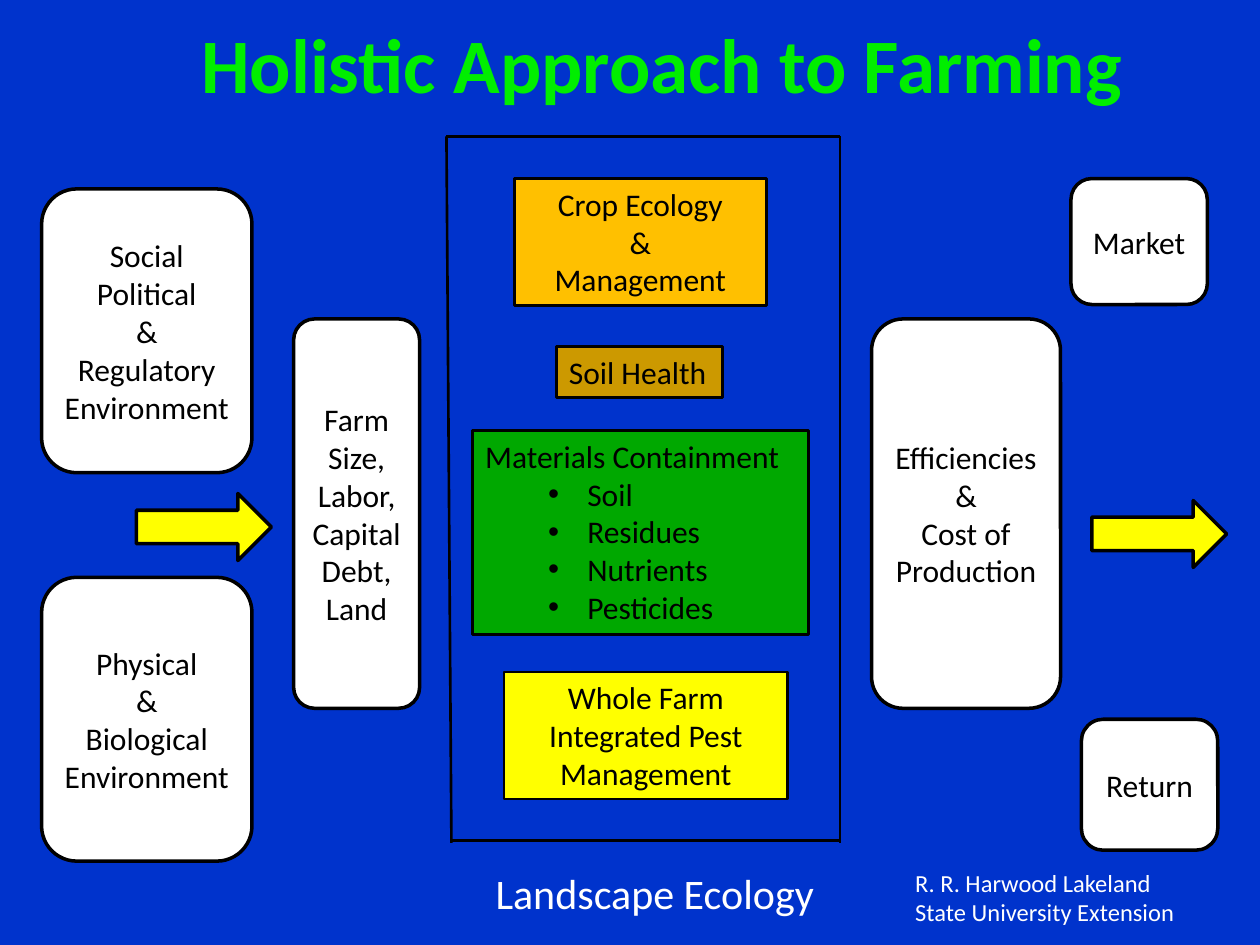
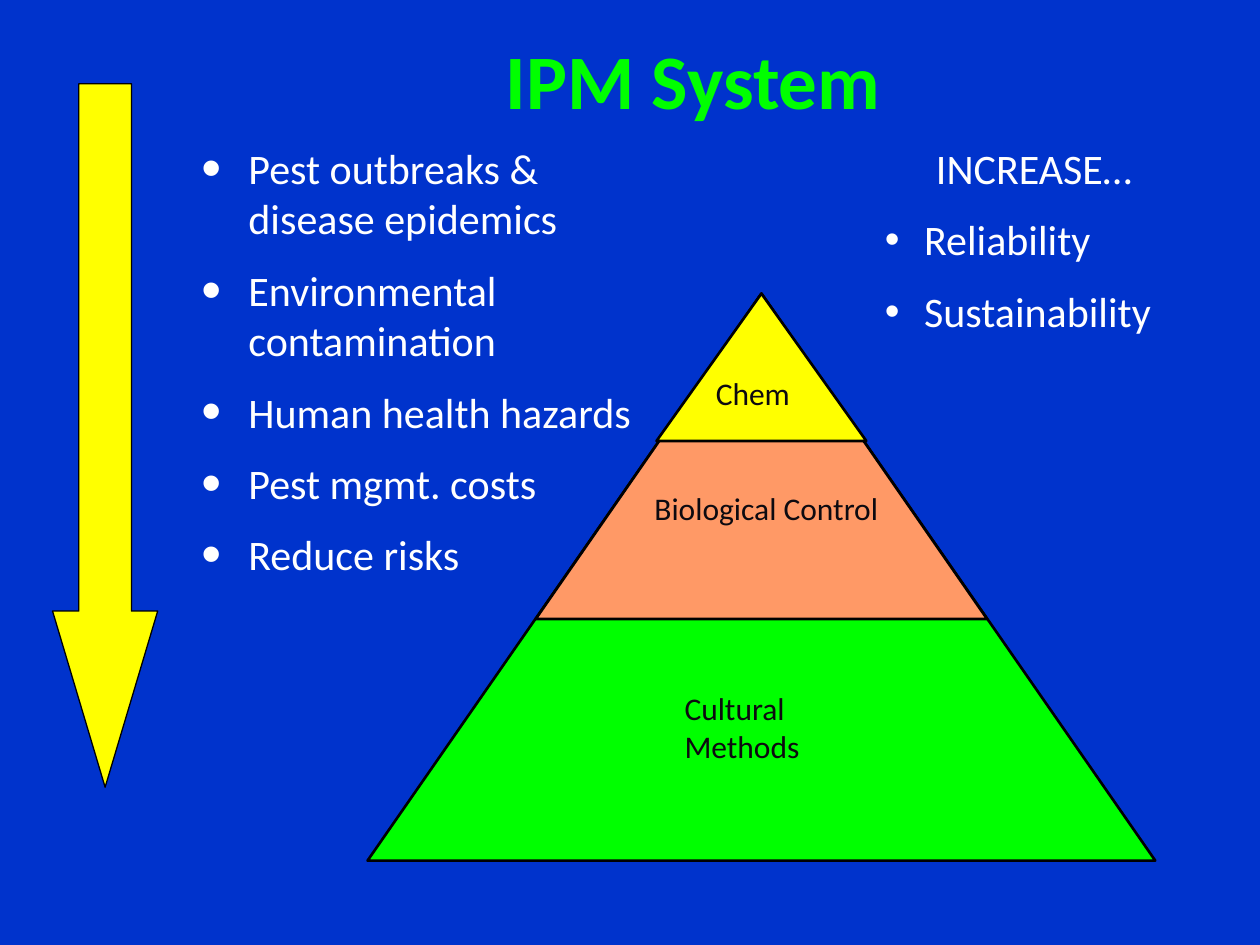
from pptx import Presentation, util as u
from pptx.dml.color import RGBColor
from pptx.enum import shapes, text
from lxml import etree

Cm = u.Cm
MSO, AL, ANC = shapes.MSO_SHAPE, text.PP_ALIGN, text.MSO_ANCHOR
C = {"bg": "0033CC", "white": "FFFFFF", "black": "000000", "ink": "0D0A10",
     "yellow": "FFFF00", "orange": "FFC000", "soil": "CC9900",
     "materials": "00A800", "salmon": "FF9966", "green": "00FF00",
     "title": "00EE00"}
color = {name: RGBColor.from_string(value) for name, value in C.items()}
A = "{http://schemas.openxmlformats.org/drawingml/2006/main}"


def shape(s, kind, box, fill=None, weight=1.5):
    lengths = [Cm(v) for v in box]
    if kind is None:
        return s.shapes.add_textbox(*lengths)
    sp = s.shapes.add_shape(kind, *lengths)
    sp.shadow.inherit = False
    sp.fill.solid()
    sp.fill.fore_color.rgb = color[fill]
    sp.line.color.rgb = color["black"]
    sp.line.width = u.Pt(weight)
    return sp


def write(sp, words, size=18, ink="black", align=AL.LEFT, anchor=ANC.TOP,
          bold=False, wrap=True, bullets=None, gap=0, bullet_size=100):
    tf = sp.text_frame
    tf.word_wrap = wrap
    tf.vertical_anchor = anchor
    tf.text = words
    for i, p in enumerate(tf.paragraphs):
        p.alignment = align
        p.space_before = u.Pt(gap if i else 0)
        for r in p.runs:
            r.font.name = "Calibri"
            r.font.size = u.Pt(size)
            r.font.bold = bold
            r.font.color.rgb = color[ink]
        if bullets and i >= bullets[0]:
            p.alignment = AL.LEFT
            pPr = p._p.get_or_add_pPr()
            pPr.set("marL", str(Cm(bullets[1])))
            pPr.set("indent", str(-Cm(bullets[2])))
            etree.SubElement(pPr, A + "buSzPct", val=str(bullet_size * 1000))
            etree.SubElement(pPr, A + "buFont", typeface="Arial")
            etree.SubElement(pPr, A + "buChar", char="•")


prs = Presentation()
prs.slide_width, prs.slide_height = Cm(25.4), Cm(19.05)
fill = prs.slide_master.background.fill
fill.solid()
fill.fore_color.rgb = color["bg"]
blank = prs.slide_layouts[6]

s = prs.slides.add_slide(blank)
sp = shape(s, None, (3.81, 0.21, 19.6, 2.14))
write(sp, "Holistic Approach to Farming", 44, "title", bold=True, wrap=False)

left, right, top, bottom = 9, 16.93, 2.75, 16.94
for x1, y1, x2, y2 in [(left, top, right, top),
                       (left, top, left + 0.1, bottom + 0.05),
                       (right, top, right, bottom + 0.05),
                       (left + 0.1, bottom, right, bottom)]:
    ln = s.shapes.add_connector(shapes.MSO_CONNECTOR.STRAIGHT,
                                Cm(x1), Cm(y1), Cm(x2), Cm(y2))
    ln.line.color.rgb = color["black"]
    ln.line.width = u.Pt(1.5)
    etree.SubElement(ln._element.spPr, A + "effectLst")

for box, words in [
        ((0.84, 3.81, 4.24, 5.72),
         "Social\nPolitical\n&\nRegulatory\nEnvironment"),
        ((0.84, 11.64, 4.24, 5.72), "Physical\n&\nBiological\nEnvironment"),
        ((5.92, 6.43, 2.54, 7.85), "Farm Size, Labor, Capital Debt, Land"),
        ((17.57, 6.43, 3.81, 7.85), "Efficiencies\n&\nCost of\nProduction"),
        ((21.59, 3.6, 2.75, 2.54), "Market"),
        ((21.8, 14.5, 2.75, 2.64), "Return")]:
    sp = shape(s, MSO.ROUNDED_RECTANGLE, box, "white", 2)
    write(sp, words, align=AL.CENTER, anchor=ANC.MIDDLE)

for box, name, words, align, bullets in [
        ((10.37, 3.6, 5.08, 2.56), "orange",
         "Crop Ecology\n&\nManagement", AL.CENTER, None),
        ((11.22, 6.99, 3.35, 1.02), "soil", "Soil Health", AL.LEFT, None),
        ((9.53, 8.68, 6.77, 4.11), "materials",
         "Materials Containment\nSoil\nResidues\nNutrients\nPesticides",
         AL.LEFT, (1, 2.06, 0.79)),
        ((10.16, 13.55, 5.72, 2.56), "yellow",
         "Whole Farm Integrated Pest Management", AL.CENTER, None)]:
    sp = shape(s, MSO.RECTANGLE, box, name)
    write(sp, words, align=align, bullets=bullets)

for x, y in [(2.75, 9.95), (22.01, 10.09)]:
    shape(s, MSO.RIGHT_ARROW, (x, y, 2.72, 1.35), "yellow", 2)

sp = shape(s, None, (9.74, 17.36, 6.99, 1.27))
write(sp, "Landscape Ecology", 24, "white")
sp = shape(s, None, (18.2, 17.37, 5.94, 1.45))
write(sp, "R. R. Harwood Lakeland State University Extension", 14, "white")

s = prs.slides.add_slide(blank)
sp = shape(s, MSO.DOWN_ARROW, (1.06, 1.69, 2.12, 14.18), "yellow", 0.75)
sp.adjustments[0], sp.adjustments[1] = 0.5, 1.675

sp = shape(s, None, (3.81, 2.75, 9.32, 9.5))
write(sp, "Pest outbreaks &\vdisease epidemics\nEnvironmental contamination\n"
      "Human health hazards\nPest mgmt. costs\nReduce risks", 24, "white",
      bullets=(0, 0.95, 0.95), gap=12, bullet_size=135)
sp = shape(s, None, (7.41, 0, 13.13, 3.18))
write(sp, "IPM System", 44, "green", AL.CENTER, ANC.MIDDLE, bold=True)
sp = shape(s, None, (16.93, 2.75, 7.83, 4.37))
write(sp, "INCREASE…\nReliability\nSustainability", 24, "white", AL.CENTER,
      bullets=(1, 1.45, 0.79), gap=12)

apex_x, apex_y = 15.35, 5.92
for width, height, name in [(15.88, 11.43, "green"), (9.1, 6.56, "salmon"),
                            (4.23, 2.97, "yellow")]:
    shape(s, MSO.ISOSCELES_TRIANGLE,
          (apex_x - width / 2, apex_y, width, height), name)

for box, words, align in [
        ((13.55, 13.76, 3.81, 1.8), "Cultural Methods", AL.LEFT),
        ((12.7, 9.74, 5.5, 1.02), "Biological Control", AL.CENTER),
        ((14.18, 7.41, 2.96, 1.02), "Chem", AL.LEFT)]:
    write(shape(s, None, box), words, ink="ink", align=align)

prs.save("out.pptx")
